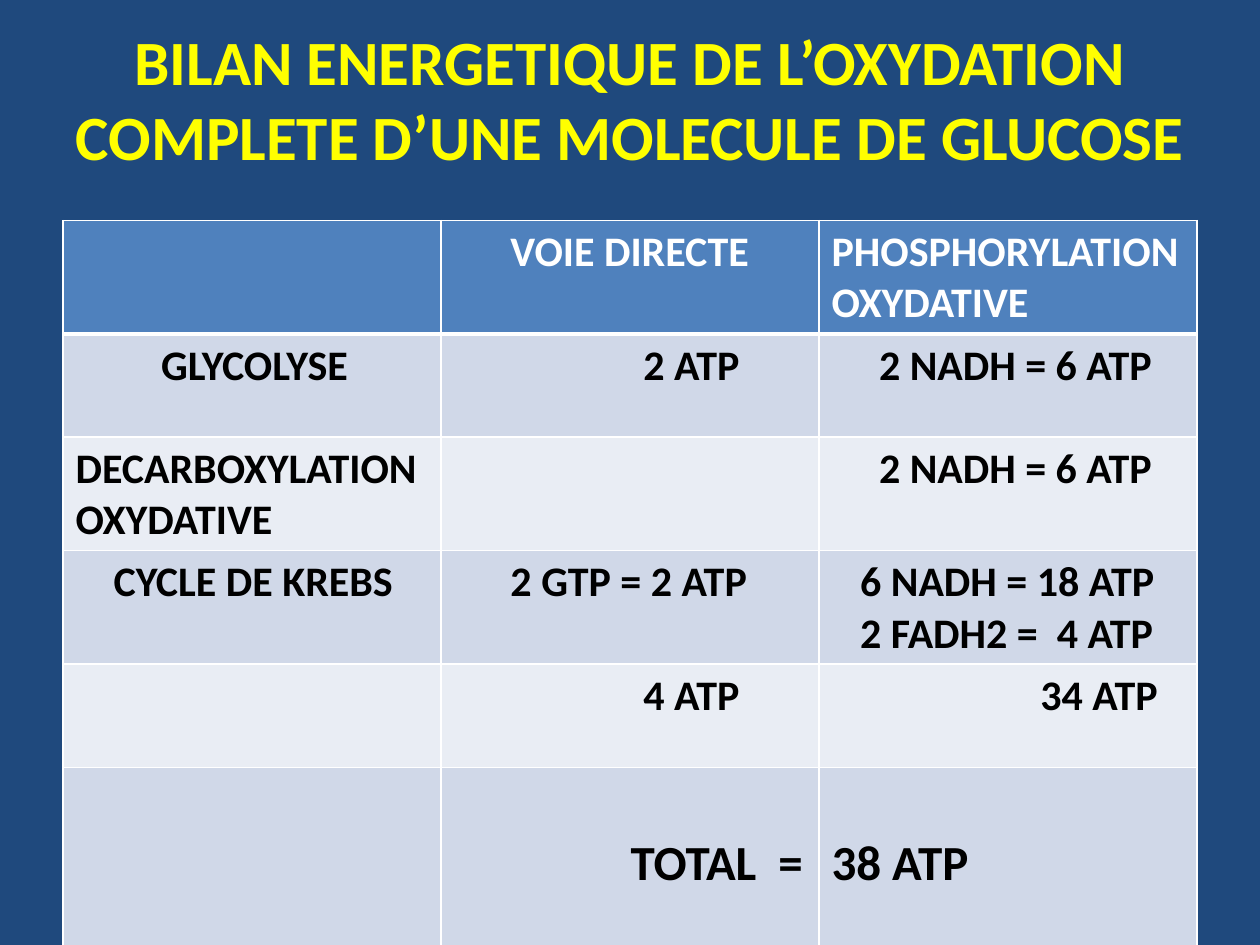
from pptx import Presentation
from pptx.dml.color import RGBColor
from pptx.enum.text import MSO_ANCHOR as Anchor, PP_ALIGN as Align
from pptx.util import Pt
from lxml.etree import SubElement
from pptx.oxml.ns import qn

NAVY = RGBColor(0x1F, 0x49, 0x7D)
YELLOW = RGBColor(0xFF, 0xFF, 0x00)
WHITE = RGBColor(0xFF, 0xFF, 0xFF)
BLACK = RGBColor(0x00, 0x00, 0x00)
BLUE = RGBColor(0x4F, 0x81, 0xBD)
BANDS = (RGBColor(0xE9, 0xED, 0xF4), RGBColor(0xD0, 0xD8, 0xE8))

FONT = "Calibri"
COLUMN_WIDTH = 216
ROW_HEIGHT = 59
TOTAL_PADDING = 37.8

TITLE = "BILAN ENERGETIQUE DE L’OXYDATION COMPLETE D’UNE MOLECULE DE GLUCOSE"
BALANCE = [
    [[], [("VOIE DIRECTE", 32.5)], [("PHOSPHORYLATION OXYDATIVE", 0)]],
    [[("GLYCOLYSE", 48.8)], [("2 ATP", 108.5)], [("2 NADH = 6 ATP", 27.1)]],
    [[("DECARBOXYLATION OXYDATIVE", 0)], [], [("2 NADH = 6 ATP", 27.1)]],
    [[("CYCLE DE KREBS", 21.7)], [("2 GTP = 2 ATP", 32.5)],
     [("6 NADH = 18 ATP", 16.3), ("2 FADH2 =  4 ATP", 16.3)]],
    [[], [("4 ATP", 108.5)], [("34 ATP", 119.3)]],
    [[], [("TOTAL  =", 101.2)], [("38 ATP", 0)]],
]


def add_run(paragraph, text, size, color):
    run = paragraph.add_run()
    run.text = text
    run.font.name = FONT
    run.font.size = Pt(size)
    run.font.bold = True
    run.font.color.rgb = color


def add_title(slide):
    title = slide.shapes.add_textbox(Pt(36), Pt(0), Pt(648), Pt(111.6))
    frame = title.text_frame
    frame.word_wrap = True
    frame.vertical_anchor = Anchor.MIDDLE
    heading = frame.paragraphs[0]
    heading.alignment = Align.CENTER
    add_run(heading, TITLE, 36, YELLOW)


def add_borders(cell, bottom_width):
    properties = cell._tc.get_or_add_tcPr()
    for side, width in (("L", 1), ("R", 1), ("T", 1), ("B", bottom_width)):
        border = SubElement(properties, qn(f"a:ln{side}"), w=str(Pt(width)))
        fill = SubElement(border, qn("a:solidFill"))
        SubElement(fill, qn("a:srgbClr"), val=str(WHITE))


def fill_cell(cell, entries, size, text_color, background):
    cell.fill.solid()
    cell.fill.fore_color.rgb = background
    for index, (text, indent) in enumerate(entries):
        frame = cell.text_frame
        line = frame.add_paragraph() if index else frame.paragraphs[0]
        line._p.get_or_add_pPr().set("marL", str(Pt(indent)))
        add_run(line, text, size, text_color)


def add_balance(slide):
    rows, columns = len(BALANCE), len(BALANCE[0])
    table = slide.shapes.add_table(
        rows, columns, Pt(36), Pt(126),
        Pt(columns * COLUMN_WIDTH), Pt(rows * ROW_HEIGHT)).table
    for row, stage in enumerate(BALANCE):
        is_header, is_total = row == 0, row == rows - 1
        for column, entries in enumerate(stage):
            cell = table.cell(row, column)
            add_borders(cell, 3 if is_header else 1)
            fill_cell(cell, entries, 28 if is_total else 24,
                      WHITE if is_header else BLACK,
                      BLUE if is_header else BANDS[row % 2])
            if is_total:
                cell.margin_top = cell.margin_bottom = Pt(TOTAL_PADDING)


def main():
    deck = Presentation()
    deck.slide_width, deck.slide_height = Pt(720), Pt(540)
    slide = deck.slides.add_slide(deck.slide_layouts[6])
    slide.background.fill.solid()
    slide.background.fill.fore_color.rgb = NAVY
    add_title(slide)
    add_balance(slide)
    deck.save("out.pptx")


if __name__ == "__main__":
    main()
